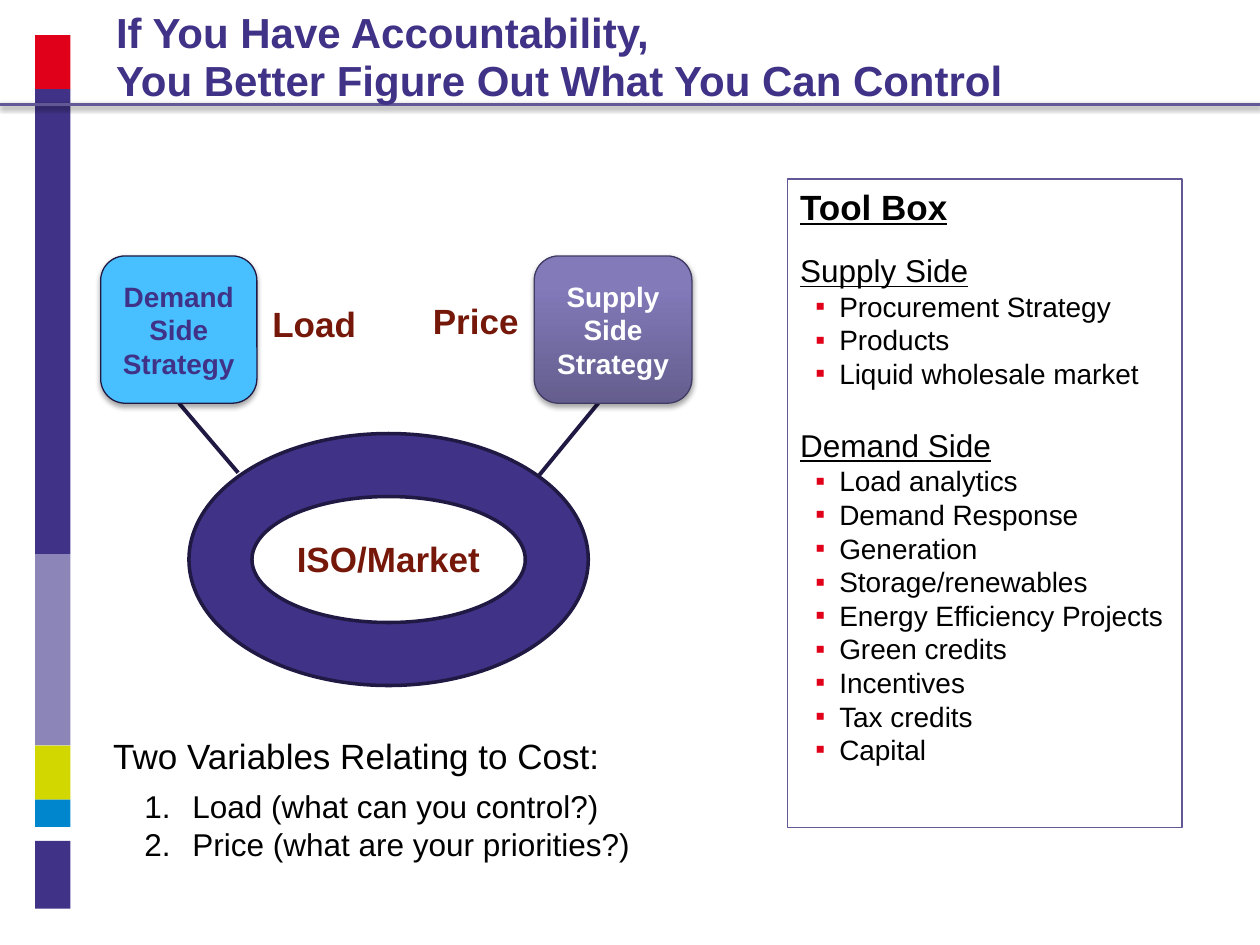
from dataclasses import dataclass

from lxml import etree
from pptx import Presentation
from pptx import util as u
from pptx.dml.color import RGBColor
from pptx.enum import shapes, text
from pptx.oxml import ns


@dataclass(frozen=True)
class Theme:
    font: str = "Arial"
    purple: str = "403387"
    lilac: str = "8C85B7"
    red: str = "E10019"
    lime: str = "D2D700"
    blue: str = "0086CD"
    sky: str = "48C0FF"
    rule: str = "615895"
    outline: str = "201944"
    supply_outline: str = "403B63"
    supply_dark: str = "645E8E"
    supply_light: str = "827AB9"
    label: str = "75180A"
    black: str = "000000"
    white: str = "FFFFFF"
    title_size: int = 24
    lead_size: int = 20
    section_size: int = 18
    item_size: int = 16


THEME = Theme()
RULE_SHADOW = (38, 3, 1)
CARD_SHADOW = (35, 3.1, 1.8)


@dataclass(frozen=True)
class Box:
    left: float
    top: float
    width: float
    height: float

    def inner(self, left, top, width, height):
        return Box(self.left + left, self.top + top, width, height)

    def lengths(self):
        return [u.Cm(n) for n in (self.left, self.top, self.width, self.height)]


def set_shadow(shape, shadow=None):
    effects = etree.SubElement(shape._element.spPr, ns.qn("a:effectLst"))
    if shadow:
        alpha, blur, distance = shadow
        outer = etree.SubElement(effects, ns.qn("a:outerShdw"), blurRad=str(u.Pt(blur)),
                                 dist=str(u.Pt(distance)), dir="5400000", rotWithShape="0")
        color = etree.SubElement(outer, ns.qn("a:srgbClr"), val=THEME.black)
        etree.SubElement(color, ns.qn("a:alpha"), val=str(alpha * 1000))


def set_line(shape, color, width):
    shape.line.color.rgb = RGBColor.from_string(color)
    shape.line.width = u.Pt(width)


def add_shape(page, kind, box, fill=None, line=None, shadow=None):
    shape = page.shapes.add_shape(kind, *box.lengths())
    if fill:
        shape.fill.solid()
        shape.fill.fore_color.rgb = RGBColor.from_string(fill)
    else:
        shape.fill.background()
    if line:
        set_line(shape, *line)
    else:
        shape.line.fill.background()
    set_shadow(shape, shadow)
    return shape


def add_line(page, box, start, end, color, width, shadow=None):
    points = [u.Cm(n) for x, y in (start, end) for n in (box.left + x, box.top + y)]
    line = page.shapes.add_connector(shapes.MSO_CONNECTOR.STRAIGHT, *points)
    set_line(line, color, width)
    set_shadow(line, shadow)


def add_text_box(page, box, wrap=True):
    frame = page.shapes.add_textbox(*box.lengths()).text_frame
    frame.word_wrap = wrap
    return frame


def set_bullet(para, margin, hanging, number=False):
    props = para._p.get_or_add_pPr()
    props.set("marL", str(u.Cm(margin)))
    props.set("indent", str(-u.Cm(hanging)))
    if number:
        etree.SubElement(props, ns.qn("a:buAutoNum"), type="arabicPeriod")
        return
    color = etree.SubElement(props, ns.qn("a:buClr"))
    etree.SubElement(color, ns.qn("a:srgbClr"), val=THEME.red)
    etree.SubElement(props, ns.qn("a:buFont"), typeface=THEME.font)
    etree.SubElement(props, ns.qn("a:buChar"), char="▪")


def write(para, words, size, color=THEME.black, align=text.PP_ALIGN.LEFT, **extra):
    para.alignment = align
    para.text = words
    values = {"name": THEME.font, "size": u.Pt(size), **extra}
    for span in para.runs:
        for name, value in values.items():
            setattr(span.font, name, value)
        span.font.color.rgb = RGBColor.from_string(color)


def add_side_stripe(page, box):
    bands = [(1.09, THEME.red, 0), (9.37, THEME.purple, 0), (3.86, THEME.lilac, 0),
             (1.09, THEME.lime, 0), (0.55, THEME.blue, 0.28), (1.37, THEME.purple, 0)]
    top = 0
    for height, color, gap in bands:
        add_shape(page, shapes.MSO_SHAPE.RECTANGLE, box.inner(0, top, box.width, height), color)
        top += height + gap


def add_header(page, box):
    add_line(page, box, (box.width, box.height), (0, box.height), THEME.rule, 2, RULE_SHADOW)
    frame = add_text_box(page, box.inner(2.34, 0.2, 20.65, 1.27))
    for side in ("left", "top", "right", "bottom"):
        setattr(frame, f"margin_{side}", 0)
    para = frame.paragraphs[0]
    write(para, "If You Have Accountability,\vYou Better Figure Out What You Can Control",
          THEME.title_size, THEME.purple, bold=True)
    para.line_spacing = 0.95


def add_card(page, box, words, fill, line, color):
    card = add_shape(page, shapes.MSO_SHAPE.ROUNDED_RECTANGLE, box, fill, line, CARD_SHADOW)
    frame = card.text_frame
    frame.word_wrap = True
    frame.vertical_anchor = text.MSO_ANCHOR.MIDDLE
    write(frame.paragraphs[0], words, THEME.item_size, color, text.PP_ALIGN.CENTER, bold=True)
    return card


def add_market_diagram(page, box):
    for start, end in (((8.84, 4.42), (10.11, 2.87)), ((2.77, 4.37), (1.58, 2.97))):
        add_line(page, box, start, end, THEME.outline, 2.25)
    add_card(page, box.inner(0, 0, 3.15, 2.97), "Demand Side Strategy",
             THEME.sky, (THEME.outline, 0.75), THEME.purple)
    supply = add_card(page, box.inner(8.74, 0, 3.18, 2.97), "Supply Side Strategy",
                      THEME.supply_light, (THEME.supply_outline, 0.75), THEME.white)
    supply.fill.gradient()
    supply.fill.gradient_angle = 90
    stops = ((0, THEME.supply_dark), (0.8, THEME.supply_light))
    for stop, (position, color) in zip(supply.fill.gradient_stops, stops):
        stop.position = position
        stop.color.rgb = RGBColor.from_string(color)
    add_shape(page, shapes.MSO_SHAPE.DONUT, box.inner(1.78, 3.58, 8.05, 5.08),
              THEME.purple, (THEME.outline, 2))
    labels = [("ISO/Market", 3.68, 5.56, 4.24), ("Load", 3.2, 0.81, 2.21),
              ("Price", 6.43, 0.76, 2.26)]
    for words, left, top, width in labels:
        frame = add_text_box(page, box.inner(left, top, width, 1.12), wrap=False)
        write(frame.paragraphs[0], words, THEME.lead_size, THEME.label,
              text.PP_ALIGN.CENTER, bold=True)


def add_cost_variables(page, box):
    frame = add_text_box(page, box)
    lead = frame.paragraphs[0]
    write(lead, "Two Variables Relating to Cost:", THEME.lead_size)
    lead.space_after = u.Pt(6)
    for words in ("Load (what can you control?)", "Price (what are your priorities?)"):
        para = frame.add_paragraph()
        set_bullet(para, 1.6, 0.97, number=True)
        write(para, words, THEME.section_size)


def add_tool_box(page, box):
    sections = [
        ("Supply Side", 13.8, ["Procurement Strategy", "Products", "Liquid wholesale market"]),
        ("Demand Side", 20.7, ["Load analytics", "Demand Response", "Generation",
                               "Storage/renewables", "Energy Efficiency Projects",
                               "Green credits", "Incentives", "Tax credits", "Capital"]),
    ]
    panel = add_shape(page, shapes.MSO_SHAPE.RECTANGLE, box, line=(THEME.rule, 0.75))
    frame = panel.text_frame
    frame.word_wrap = True
    frame.vertical_anchor = text.MSO_ANCHOR.TOP
    write(frame.paragraphs[0], "Tool Box", THEME.lead_size, bold=True, underline=True)
    for heading, gap, items in sections:
        para = frame.add_paragraph()
        write(para, heading, THEME.section_size, underline=True)
        para.space_before = u.Pt(gap)
        for words in items:
            para = frame.add_paragraph()
            set_bullet(para, 0.79, 0.48)
            write(para, words, THEME.item_size)


def main():
    deck = Presentation()
    deck.slide_width, deck.slide_height = u.Cm(25.4), u.Cm(19.05)
    page = deck.slides.add_slide(deck.slide_layouts[6])
    add_side_stripe(page, Box(0.71, 0.71, 0.71, 17.63))
    add_header(page, Box(0, 0, 25.4, 2.11))
    add_cost_variables(page, Box(2.03, 14.68, 13.36, 2.87))
    add_market_diagram(page, Box(2.03, 5.16, 11.92, 8.66))
    add_tool_box(page, Box(15.88, 3.61, 7.95, 13.08))
    deck.save("out.pptx")


if __name__ == "__main__":
    main()
